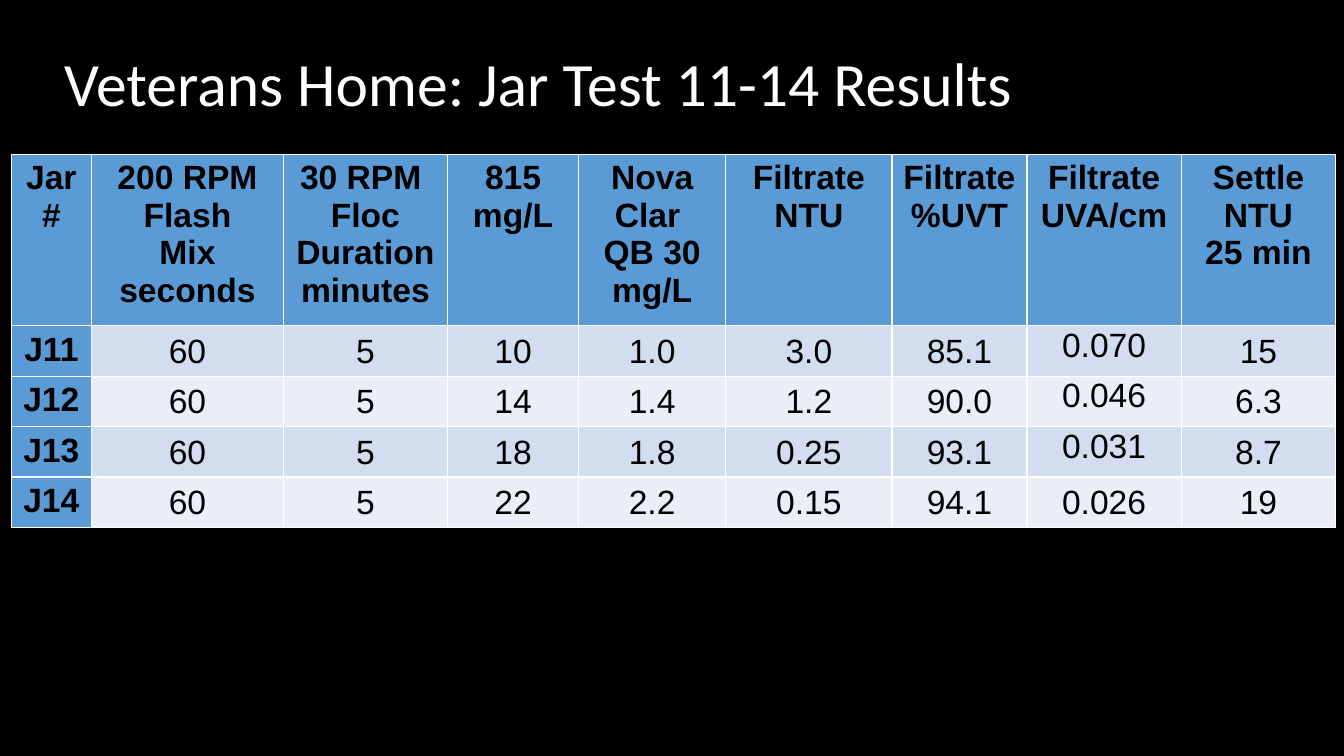
import pptx
import pptx.util
import pptx.dml.color
import pptx.enum.text
from pptx.util import Cm, Pt

TITLE = "Veterans Home: Jar Test 11-14 Results"
HEADINGS = [
    "Jar\n#",
    "200 RPM\nFlash\nMix\nseconds",
    "30 RPM \nFloc\nDuration\nminutes",
    "815\nmg/L",
    "Nova Clar \nQB 30\nmg/L",
    "Filtrate\nNTU",
    "Filtrate\n%UVT",
    "Filtrate\nUVA/cm",
    "Settle\nNTU\n25 min",
]
JARS = [
    ("J11", "60", "5", "10", "1.0", "3.0", "85.1", "0.070", "15"),
    ("J12", "60", "5", "14", "1.4", "1.2", "90.0", "0.046", "6.3"),
    ("J13", "60", "5", "18", "1.8", "0.25", "93.1", "0.031", "8.7"),
    ("J14", "60", "5", "22", "2.2", "0.15", "94.1", "0.026", "19"),
]
COLUMN_WIDTHS = [2.03, 4.83, 4.14, 3.3, 3.71, 4.19, 3.4, 3.89, 3.89]
ROW_HEIGHTS = [4.04] + [1.2] * len(JARS)
UVA_COLUMN = 7

BLACK, WHITE, HEADING_BLUE = "000000", "FFFFFF", "5B9BD5"
BANDS = ["D2DEEF", "EAEFF7"]
MIDDLE = pptx.enum.text.MSO_ANCHOR.MIDDLE
TOP = pptx.enum.text.MSO_ANCHOR.TOP
TITLE_FONT = {"name": "Calibri", "size": Pt(44), "bold": False}
TABLE_FONT = {"name": "Arial", "size": Pt(24)}
VALUE_MARGINS = {"margin_left": Cm(0.03), "margin_right": Cm(0.03),
                 "margin_top": Cm(0.03), "margin_bottom": Cm(0)}


def paint(fill, color):
    fill.solid()
    fill.fore_color.rgb = pptx.dml.color.RGBColor.from_string(color)


def apply(target, values):
    for attribute, value in values.items():
        setattr(target, attribute, value)


def write(frame, text, font, color, paragraph_format):
    """Put each line of the text in its own formatted paragraph."""
    frame.text = text
    for paragraph in frame.paragraphs:
        apply(paragraph, paragraph_format)
        for run in paragraph.runs:
            apply(run.font, font)
            paint(run.font.fill, color)


def add_title(slide):
    title = slide.shapes.add_textbox(Cm(1.37), Cm(0.33), Cm(30.18), Cm(3.68))
    apply(title.text_frame, {"word_wrap": True, "vertical_anchor": MIDDLE})
    write(title.text_frame, TITLE, TITLE_FONT, WHITE, {"line_spacing": 0.9})


def add_results(slide):
    """Add the table; its default style draws the white borders."""
    rows = [HEADINGS] + JARS
    table = slide.shapes.add_table(
        len(rows), len(HEADINGS), Cm(0.28), Cm(3.89),
        Cm(sum(COLUMN_WIDTHS)), Cm(sum(ROW_HEIGHTS))).table
    table.first_col = True
    for column, width in zip(table.columns, COLUMN_WIDTHS):
        column.width = Cm(width)
    for row, height in zip(table.rows, ROW_HEIGHTS):
        row.height = Cm(height)

    for r, row in enumerate(rows):
        for c, text in enumerate(row):
            cell = table.cell(r, c)
            is_heading = r == 0 or c == 0
            paint(cell.fill, HEADING_BLUE if is_heading else BANDS[(r - 1) % 2])
            if not is_heading:
                apply(cell, VALUE_MARGINS)
                raised = c == UVA_COLUMN and r < len(JARS)
                cell.vertical_anchor = TOP if raised else MIDDLE
            write(cell.text_frame, text, {**TABLE_FONT, "bold": is_heading}, BLACK,
                  {"alignment": pptx.enum.text.PP_ALIGN.CENTER})


def main():
    deck = pptx.Presentation()
    apply(deck, {"slide_width": Cm(33.87), "slide_height": Cm(19.05)})
    slide = deck.slides.add_slide(deck.slide_layouts[6])
    paint(slide.background.fill, BLACK)
    add_title(slide)
    add_results(slide)
    deck.save("out.pptx")


if __name__ == "__main__":
    main()
